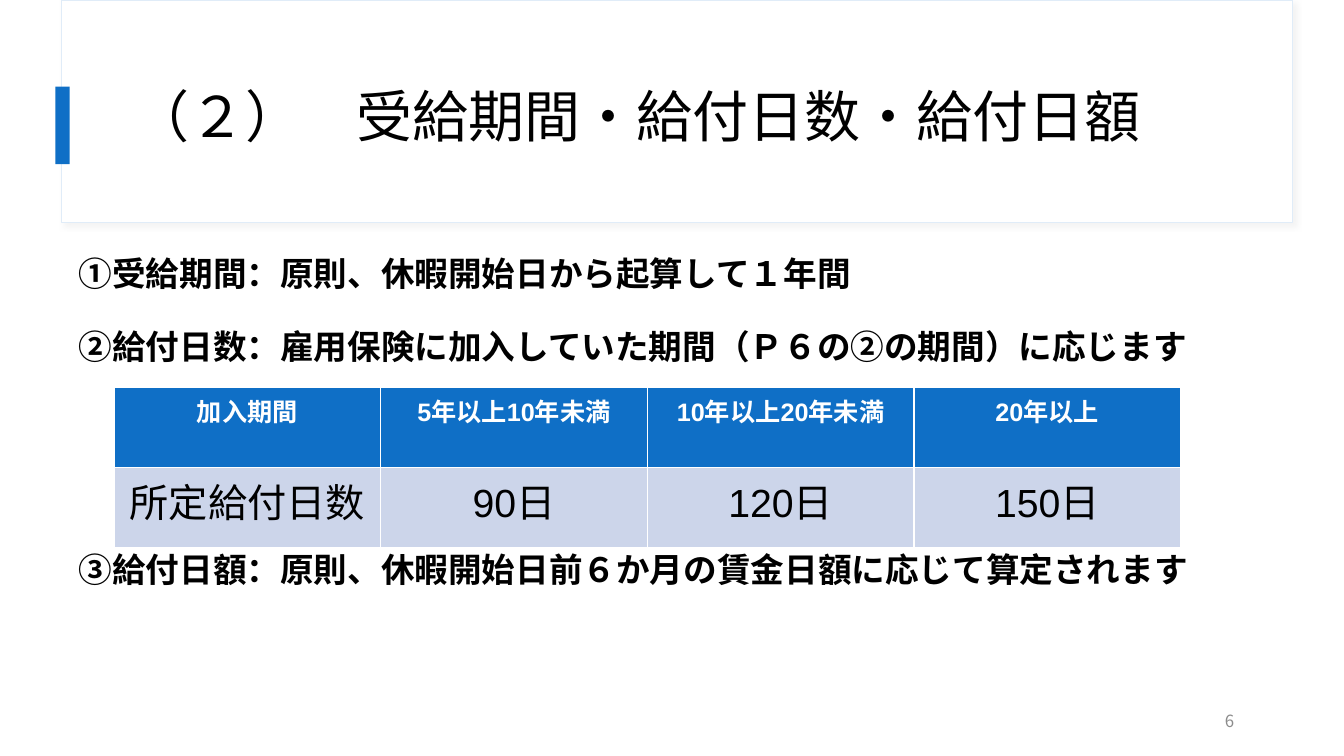
"""Build the slide on benefit period, benefit days and daily benefit amount."""
import pptx
import pptx.dml.color
import pptx.enum.shapes
import pptx.enum.text
import pptx.oxml
import pptx.oxml.ns
import pptx.util

Inches, Pt = pptx.util.Inches, pptx.util.Pt
RGB = pptx.dml.color.RGBColor.from_string
ALIGN = pptx.enum.text.PP_ALIGN
ANCHOR = pptx.enum.text.MSO_ANCHOR

THEME = {
    "white": "FFFFFF", "accent": "0F6FC6", "frame": "E0ECF8",
    "band": "CCD5EA", "black": "000000", "gray": "8C8C8C",
    "cjk": "Noto Sans CJK JP", "latin": "Arial",
    "title": 40, "body": 24, "head": 18, "cell": 28, "number": 12,
}


def place(sp, left, top, width, height):
    box = {"left": left, "top": top, "width": width, "height": height}
    for name, value in box.items():
        setattr(sp, name, Inches(value))


def write(p, text, size, color, font="cjk", bold=False, **layout):
    for name, value in layout.items():
        setattr(p, name, value)
    r = p.add_run()
    r.text = text
    formats = {"size": Pt(THEME[size]), "name": THEME[font], "bold": bold}
    for name, value in formats.items():
        setattr(r.font, name, value)
    r.font.color.rgb = RGB(THEME[color])
    ea = pptx.oxml.parse_xml(
        f'<a:ea {pptx.oxml.ns.nsdecls("a")} typeface="{THEME["cjk"]}"/>')
    r._r.rPr.find(pptx.oxml.ns.qn("a:latin")).addnext(ea)


prs = pptx.Presentation()
prs.slide_width, prs.slide_height = Inches(13.33), Inches(7.5)
s = prs.slides.add_slide(prs.slide_layouts[1])
title, body = s.placeholders[0], s.placeholders[1]

bars = [((0.61, 0, 12.21, 2.21), "white", "frame"),
        ((0.55, 0.86, 0.14, 0.77), "accent", None)]
for index, (box, fill, line) in enumerate(bars):
    sp = s.shapes.add_shape(pptx.enum.shapes.MSO_SHAPE.RECTANGLE,
                            *map(Inches, box))
    sp.shadow.inherit = False
    sp.fill.solid()
    sp.fill.fore_color.rgb = RGB(THEME[fill])
    if line:
        sp.line.color.rgb = RGB(THEME[line])
        sp.line.width = Pt(0.75)
        effects = sp._element.spPr.find(pptx.oxml.ns.qn("a:effectLst"))
        effects.append(pptx.oxml.parse_xml(
            f'<a:outerShdw {pptx.oxml.ns.nsdecls("a")} blurRad="50800" '
            'dist="38100" dir="2700000"><a:srgbClr val="D9D9D9">'
            '<a:alpha val="30000"/></a:srgbClr></a:outerShdw>'))
    else:
        sp.line.fill.background()
    s.shapes._spTree.insert(2 + index, sp._element)

place(title, 1.22, 0.54, 11.12, 1.29)
place(body, 0.68, 2.46, 12.2, 4.49)
for sp, anchor in ((title, ANCHOR.MIDDLE), (body, ANCHOR.TOP)):
    formats = {"word_wrap": True, "vertical_anchor": anchor,
               "auto_size": pptx.enum.text.MSO_AUTO_SIZE.NONE}
    for name, value in formats.items():
        setattr(sp.text_frame, name, value)

write(title.text_frame.paragraphs[0], "（２）　受給期間・給付日数・給付日額",
      "title", "black", alignment=ALIGN.LEFT, line_spacing=0.9)

points = [
    ("①受給期間：原則、休暇開始日から起算して１年間", 0),
    ("②給付日数：雇用保険に加入していた期間（Ｐ６の②の期間）に応じます", 23),
    ("③給付日額：原則、休暇開始日前６か月の賃金日額に応じて算定されます", 131),
]
tf = body.text_frame
for index, (text, gap) in enumerate(points):
    p = tf.add_paragraph() if index else tf.paragraphs[0]
    write(p, text, "body", "black", "latin", True, alignment=ALIGN.LEFT,
          line_spacing=1.0, space_before=Pt(gap), space_after=Pt(0))
    pPr = p._p.get_or_add_pPr()
    pPr.set("marL", "0")
    pPr.set("indent", "0")
    pPr.append(pptx.oxml.parse_xml(
        f'<a:buNone {pptx.oxml.ns.nsdecls("a")}/>'))

rows = [
    (["加入期間", "5年以上10年未満", "10年以上20年未満", "20年以上"],
     "accent", "head", "white", True),
    (["所定給付日数", "90日", "120日", "150日"],
     "band", "cell", "black", False),
]
table = s.shapes.add_table(len(rows), 4, Inches(1.13), Inches(3.84),
                           Inches(10.58), Inches(1.59)).table
for row, (texts, fill, size, color, bold) in enumerate(rows):
    for column, text in enumerate(texts):
        cell = table.cell(row, column)
        cell.fill.solid()
        cell.fill.fore_color.rgb = RGB(THEME[fill])
        write(cell.text_frame.paragraphs[0], text, size, color, "latin", bold,
              alignment=ALIGN.CENTER)

number = s.shapes.add_textbox(*map(Inches, (9.34, 6.95, 3, 0.4)))
number.text_frame.word_wrap = True
number.text_frame.vertical_anchor = ANCHOR.MIDDLE
write(number.text_frame.paragraphs[0], "6", "number", "gray",
      alignment=ALIGN.RIGHT)

prs.save("out.pptx")
